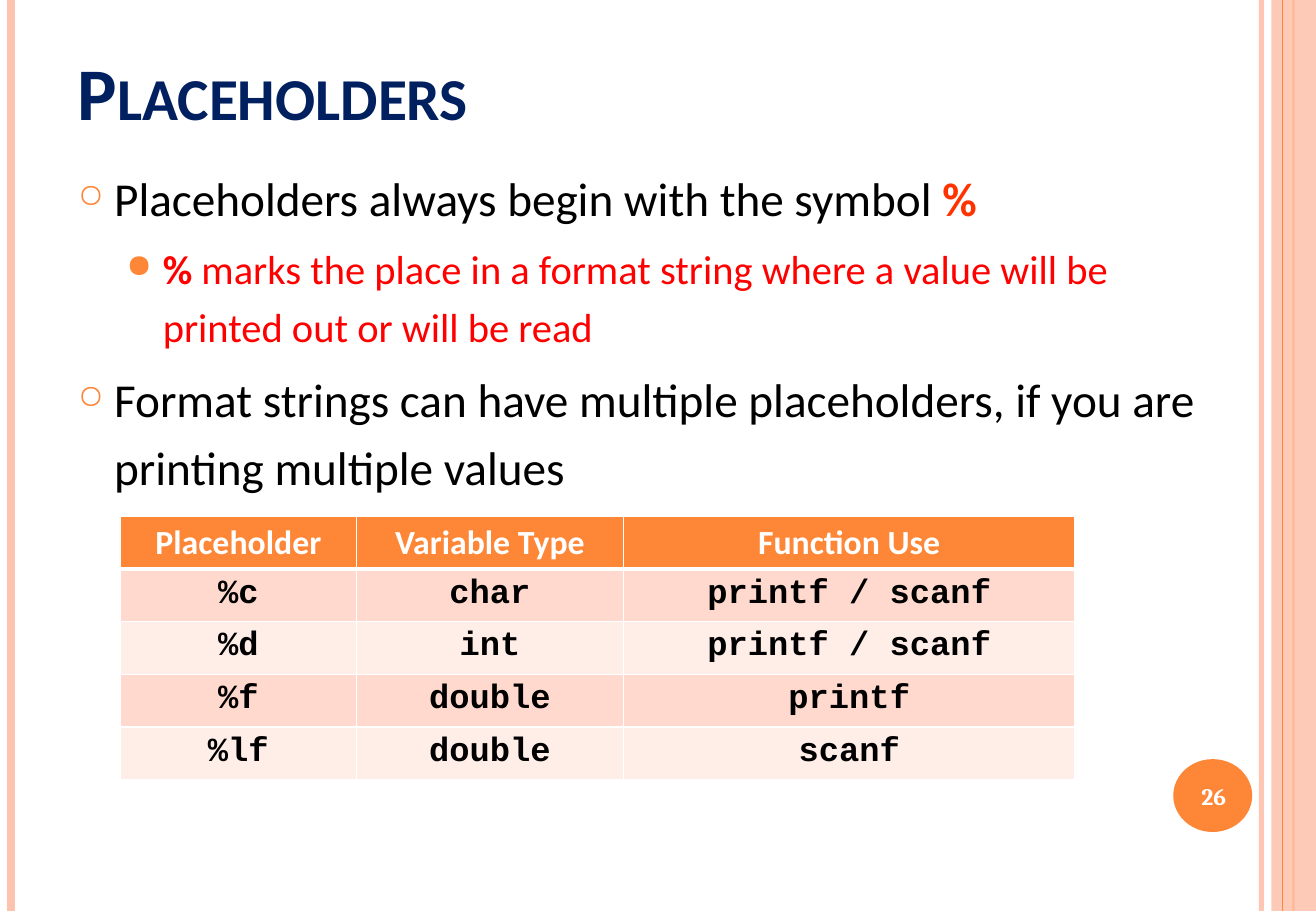
from lxml import etree
from pptx import Presentation
from pptx import util as u
from pptx.dml.color import RGBColor
from pptx.enum import shapes, text
from pptx.oxml.ns import qn

PX = 7620  # EMU, 120 px to the inch
WIDTH, HEIGHT = 1300, 900
ORANGE, PEACH, WHITE, BLACK = "FE8637", "FEC3AE", "FFFFFF", "000000"
BANDS = ["FFD9CE", "FFEDE8"]

TITLE = "Placeholders"
PAGE = "26"
# level, size, [(text, colour, bold)]
POINTS = [
    (0, 28, [("Placeholders always begin with the symbol ", BLACK, False),
             ("%", "FF3300", True)]),
    (1, 24, [("% ", "FF0000", True),
             ("marks the place in a format string where a value will be "
              "printed out or will be read", "FF0000", False)]),
    (0, 28, [("Format strings can have multiple placeholders, if you are "
              "printing multiple values", BLACK, False)]),
]
# per level: bullet, size in percent, left margin
BULLETS = [("○", 70, 36), ("●", 80, 84)]
HANGING = 36

ROWS = [
    ("Placeholder", "Variable Type", "Function Use"),
    ("%c", "char", "printf / scanf"),
    ("%d", "int", "printf / scanf"),
    ("%f", "double", "printf"),
    ("%lf", "double", "scanf"),
]
COLUMNS = [233, 264, 446]
ROW_HEIGHT = 50
# x, colour, points, opacity; the side band covers the last but one
STRIPES = [(1246, PEACH, 3, 93), (11, PEACH, 4.5, 100), (1278, ORANGE, 1.5, 100)]
BAND_EDGE = (1267, ORANGE, 0.75, 100)


def px(*lengths):
    return [u.Emu(length * PX) for length in lengths]


def rgb(colour):
    return RGBColor.from_string(colour)


def add(parent, tag, **attributes):
    child = etree.SubElement(parent, qn(tag))
    for key, value in attributes.items():
        child.set(key, str(value))
    return child


def set_opacity(shape, percent):
    for colour in shape._element.spPr.iter(qn("a:srgbClr")):
        add(colour, "a:alpha", val=percent * 1000)


def style(run, font, size, colour, bold):
    run.font.name, run.font.size, run.font.bold = font, u.Pt(size), bold
    run.font.color.rgb = rgb(colour)


def add_stripe(slide, x, colour, points, opacity):
    stripe = slide.shapes.add_connector(
        shapes.MSO_CONNECTOR.STRAIGHT, *px(x, 0, x, HEIGHT))
    stripe.line.color.rgb = rgb(colour)
    stripe.line.width = u.Pt(points)
    if opacity < 100:
        set_opacity(stripe, opacity)
    add(stripe._element.spPr, "a:effectLst")


def add_solid(slide, kind, box, colour):
    solid = slide.shapes.add_shape(kind, *px(*box))
    solid.shadow.inherit = False
    solid.fill.solid()
    solid.fill.fore_color.rgb = rgb(colour)
    solid.line.fill.background()
    return solid


def add_frame(slide, box, anchor):
    frame = slide.shapes.add_textbox(*px(*box)).text_frame
    frame.word_wrap = True
    frame.vertical_anchor = anchor
    return frame


def add_points(slide):
    frame = add_frame(slide, (65, 150, 1148, 360), text.MSO_ANCHOR.TOP)
    for i, (level, size, pieces) in enumerate(POINTS):
        point = frame.add_paragraph() if i else frame.paragraphs[0]
        point.level, point.line_spacing, point.space_before = level, 1.2, u.Pt(5)
        bullet, percent, margin = BULLETS[level]
        props = point._p.get_or_add_pPr()
        props.set("marL", str(margin * PX))
        props.set("indent", str(-HANGING * PX))
        add(add(props, "a:buClr"), "a:srgbClr", val=ORANGE)
        add(props, "a:buSzPct", val=percent * 1000)
        add(props, "a:buChar", char=bullet)
        for words, colour, bold in pieces:
            run = point.add_run()
            run.text = words
            style(run, "Calibri", size, colour, bold)


def set_borders(cell, row):
    """White rules, thicker between the header and the rows below."""
    widths = {"L": 1, "R": 1, "T": 3 if row == 1 else 1, "B": 1 if row else 3}
    for side, points in widths.items():
        rule = add(cell._tc.get_or_add_tcPr(), "a:ln" + side, w=u.Pt(points))
        add(add(rule, "a:solidFill"), "a:srgbClr", val=WHITE)


def add_types(slide):
    types = slide.shapes.add_table(
        len(ROWS), len(COLUMNS),
        *px(119, 510, sum(COLUMNS), ROW_HEIGHT * len(ROWS))).table
    for column, width in zip(types.columns, px(*COLUMNS)):
        column.width = width
    for r, entries in enumerate(ROWS):
        fill = BANDS[(r - 1) % 2] if r else ORANGE
        font, colour = ("Courier New", BLACK) if r else ("Calibri", WHITE)
        for c, entry in enumerate(entries):
            cell = types.cell(r, c)
            set_borders(cell, r)
            cell.fill.solid()
            cell.fill.fore_color.rgb = rgb(fill)
            cell.text_frame.text = entry
            paragraph = cell.text_frame.paragraphs[0]
            paragraph.alignment = text.PP_ALIGN.CENTER
            style(paragraph.runs[0], font, 20, colour, True)


def main():
    deck = Presentation()
    deck.slide_width, deck.slide_height = px(WIDTH, HEIGHT)
    slide = deck.slides.add_slide(deck.slide_layouts[6])

    for stripe in STRIPES:
        add_stripe(slide, *stripe)
    band = add_solid(slide, shapes.MSO_SHAPE.RECTANGLE, (1256, 0, 44, HEIGHT), PEACH)
    set_opacity(band, 87)
    add_stripe(slide, *BAND_EDGE)
    add_solid(slide, shapes.MSO_SHAPE.OVAL, (1159, 750, 78, 72), ORANGE)

    title = add_frame(slide, (65, 36, 1062, 104), text.MSO_ANCHOR.BOTTOM)
    title.text = TITLE
    heading = title.paragraphs[0].runs[0]
    style(heading, "Calibri", 44, "002060", True)
    heading._r.get_or_add_rPr().set("cap", "small")

    add_points(slide)

    page = add_frame(slide, (1156, 752, 86, 68), text.MSO_ANCHOR.MIDDLE)
    page.text = PAGE
    page.paragraphs[0].alignment = text.PP_ALIGN.CENTER
    style(page.paragraphs[0].runs[0], "Cambria", 14, WHITE, True)

    add_types(slide)
    deck.save("out.pptx")


if __name__ == "__main__":
    main()
